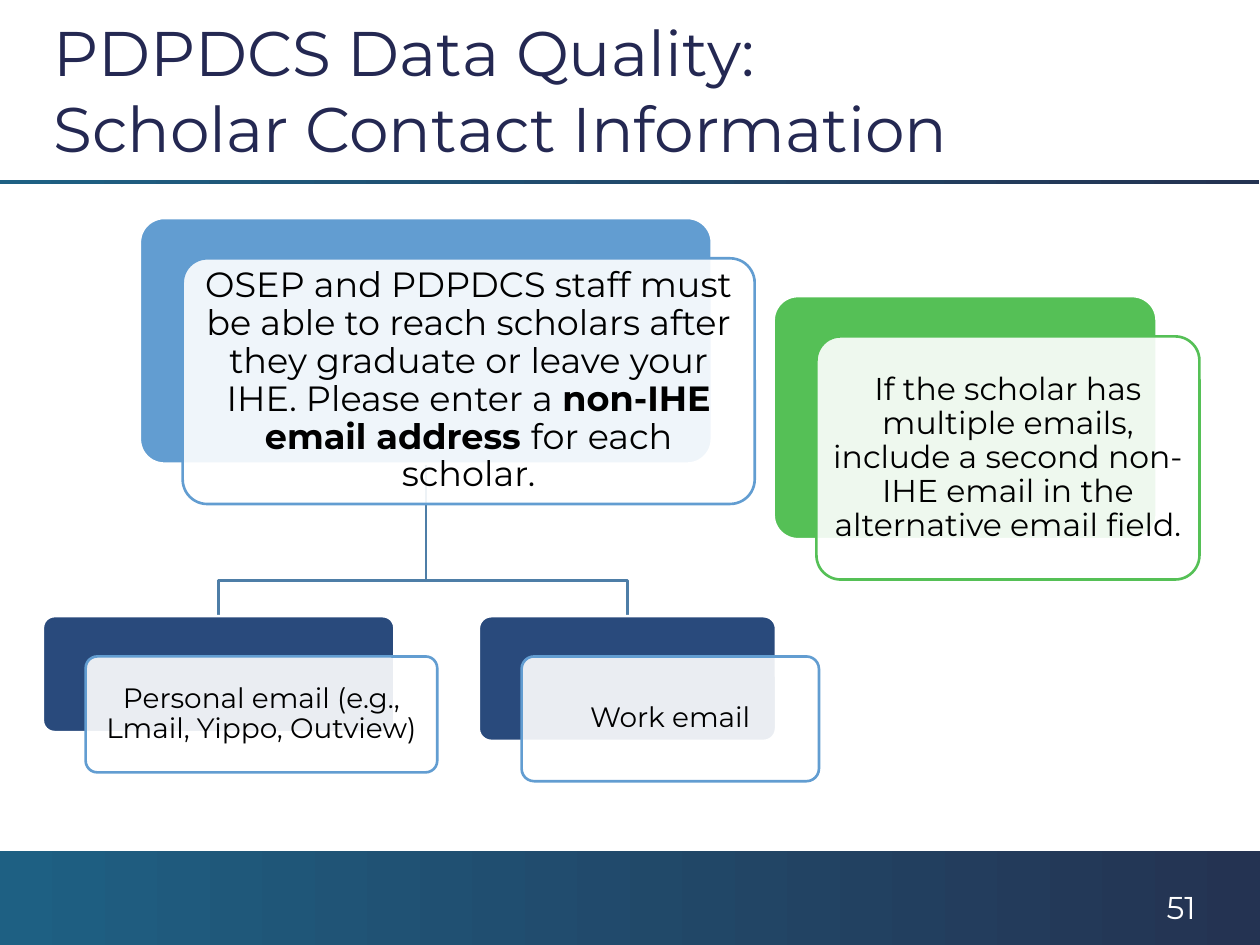
from pptx import Presentation
from pptx.dml import color
from pptx.enum import shapes, text
from pptx.oxml import ns
from pptx.util import Inches, Pt
from lxml import etree

COLORS = {
    "teal": "1E6083", "navy": "243352", "title": "242852", "line": "4E7EA7",
    "sky": "629DD1", "blue": "294A7C", "green": "55C056",
    "white": "FFFFFF", "black": "000000",
}
FONT = "Montserrat"
OFFSET_X, OFFSET_Y = 0.34, 0.32


def rgb(name):
    """Return the named colour."""
    return color.RGBColor.from_string(COLORS[name])


def style_run(r, size, name, bold=False):
    """Set the font of one run."""
    r.font.name, r.font.size, r.font.bold = FONT, Pt(size), bold
    r.font.color.rgb = rgb(name)


def add_shape(s, kind, box):
    """Add a preset shape without a shadow."""
    sp = s.shapes.add_shape(kind, *map(Inches, box))
    sp.shadow.inherit = False
    return sp


def add_band(s, box):
    """Add a bar with the teal to navy gradient."""
    sp = add_shape(s, shapes.MSO_SHAPE.RECTANGLE, box)
    sp.line.fill.background()
    sp.fill.gradient()
    sp.fill.gradient_angle = 0
    for stop, name in zip(sp.fill.gradient_stops, ("teal", "navy")):
        stop.color.rgb = rgb(name)


def add_label(s, box, words, size, name, anchor):
    """Add a left-aligned text box."""
    tf = s.shapes.add_textbox(*map(Inches, box)).text_frame
    tf.word_wrap = True
    tf.vertical_anchor = anchor
    tf.text = words
    for r in tf.paragraphs[0].runs:
        style_run(r, size, name)


def add_panel(s, box, fill, line):
    """Add a rounded panel with a thin outline."""
    sp = add_shape(s, shapes.MSO_SHAPE.ROUNDED_RECTANGLE, box)
    sp.adjustments[0] = 0.1
    sp.fill.solid()
    sp.fill.fore_color.rgb = rgb(fill)
    sp.line.color.rgb = rgb(line)
    sp.line.width = Pt(1.5)
    return sp


def add_card(s, box, fill, line, size, parts, margin=0.07):
    """Add a coloured panel with an offset translucent text panel over it."""
    left, top, width, height = box
    add_panel(s, box, fill, "white")
    sp = add_panel(s, (left + OFFSET_X, top + OFFSET_Y, width, height), "white", line)
    clr = sp.fill._xPr.find(ns.qn("a:solidFill"))[0]
    etree.SubElement(clr, ns.qn("a:alpha"), val="90000")
    tf = sp.text_frame
    tf.word_wrap = True
    tf.vertical_anchor = text.MSO_ANCHOR.MIDDLE
    tf.margin_left = tf.margin_right = tf.margin_top = tf.margin_bottom = Inches(margin)
    p = tf.paragraphs[0]
    p.alignment = text.PP_ALIGN.CENTER
    p.line_spacing = 0.9
    for words, bold in parts:
        r = p.add_run()
        r.text = words
        style_run(r, size, "black", bold)


def add_branch(s, parent, child, bend):
    """Draw a bent line from the bottom of one box to the top of another."""
    x1, y1 = parent[0] + parent[2] / 2, parent[1] + parent[3]
    x2, y2 = child[0] + child[2] / 2, child[1]
    builder = s.shapes.build_freeform(Inches(x1), Inches(y1))
    points = [(x1, bend), (x2, bend), (x2, y2)]
    builder.add_line_segments([(Inches(x), Inches(y)) for x, y in points], close=False)
    sp = builder.convert_to_shape()
    sp.shadow.inherit = False
    sp.fill.background()
    sp.line.color.rgb = rgb("line")
    sp.line.width = Pt(1.5)


def add_frame(s):
    """Add the title, the rule below it and the footer with page number."""
    add_band(s, (0, 6.75, 10, 0.75))
    add_band(s, (-0.01, 1.43, 10, 0.03))
    add_label(s, (0.33, 0.17, 9.25, 1.08),
              "PDPDCS Data Quality:\vScholar Contact Information",
              36, "title", text.MSO_ANCHOR.MIDDLE)
    add_label(s, (9.16, 7, 0.58, 0.27), "51", 18, "white", text.MSO_ANCHOR.TOP)


def add_diagram(s):
    """Add the contact rule, its two email kinds and the side note."""
    rule = (1.11, 1.73, 4.54, 1.95)
    personal = (0.34, 4.89, 2.79, 0.92)
    work = (3.8, 4.89, 2.36, 0.99)
    for child in (work, personal):
        add_branch(s, rule, child, 4.61)
    add_card(s, rule, "sky", "sky", 20, [
        ("OSEP and PDPDCS staff must be able to reach scholars after they "
         "graduate or leave your IHE. Please enter a ", False),
        ("non-IHE email address ", True),
        ("for each scholar.", False)], 0.08)
    add_card(s, personal, "blue", "sky", 16,
             [("Personal email (e.g., Lmail, Yippo, Outview)", False)])
    add_card(s, work, "blue", "sky", 16, [("Work email", False)])
    add_card(s, (6.14, 2.35, 3.04, 1.93), "green", "green", 18, [
        ("If the scholar has multiple emails, include a second non-IHE email "
         "in the alternative email field.", False)])


def main():
    """Build and save the slide."""
    prs = Presentation()
    prs.slide_width, prs.slide_height = Inches(10), Inches(7.5)
    s = prs.slides.add_slide(prs.slide_layouts[6])
    add_frame(s)
    add_diagram(s)
    prs.save("out.pptx")


if __name__ == "__main__":
    main()
